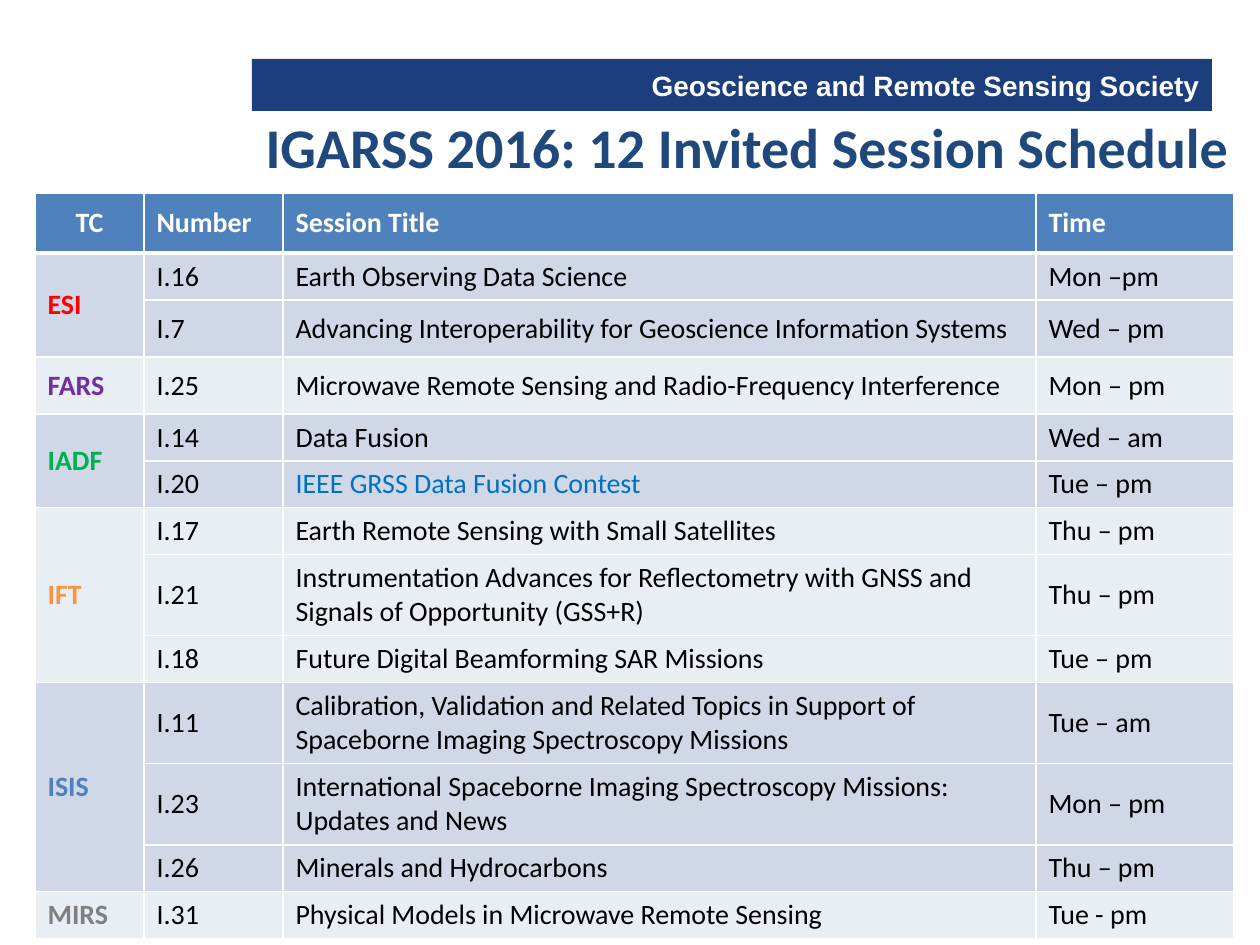
import pptx
import pptx.dml.color
import pptx.enum.shapes
import pptx.enum.text
import pptx.oxml
import pptx.oxml.ns
import pptx.util

PX_PER_INCH = 126
ALIGN = pptx.enum.text.PP_ALIGN
ANCHOR = pptx.enum.text.MSO_ANCHOR

COLORS = {
    "white": "FFFFFF", "black": "000000", "banner": "1C3E7D", "title": "1F497D",
    "header": "4F81BD", "dark_band": "D0D8E8", "light_band": "E9EDF4",
    "contest": "0070C0", "ESI": "FF0000", "FARS": "7030A0", "IADF": "00B050",
    "IFT": "F79646", "ISIS": "4F81BD", "MIRS": "808080",
}
HEADINGS = ["TC", "Number", "Session Title", "Time"]
COLUMN_WIDTHS = [109, 139, 753, 198]
HEADER_HEIGHT = 60
CONTEST = "IEEE GRSS Data Fusion Contest"
SCHEDULE = {
    "ESI": [
        ("I.16", "Earth Observing Data Science", "Mon –pm", 47),
        ("I.7", "Advancing Interoperability for Geoscience Information Systems", "Wed – pm", 57),
    ],
    "FARS": [
        ("I.25", "Microwave Remote Sensing and Radio-Frequency Interference", "Mon – pm", 57),
    ],
    "IADF": [
        ("I.14", "Data Fusion", "Wed – am", 46),
        ("I.20", CONTEST, "Tue – pm", 46),
    ],
    "IFT": [
        ("I.17", "Earth Remote Sensing with Small Satellites", "Thu – pm", 46),
        ("I.21", "Instrumentation Advances for Reflectometry with GNSS and "
                 "Signals of Opportunity (GSS+R)", "Thu – pm", 60),
        ("I.18", "Future Digital Beamforming SAR Missions", "Tue – pm", 46),
    ],
    "ISIS": [
        ("I.11", "Calibration, Validation and Related Topics in Support of "
                 "Spaceborne Imaging Spectroscopy Missions", "Tue – am", 60),
        ("I.23", "International Spaceborne Imaging Spectroscopy Missions: "
                 "Updates and News", "Mon – pm", 60),
        ("I.26", "Minerals and Hydrocarbons", "Thu – pm", 46),
    ],
    "MIRS": [
        ("I.31", "Physical Models in Microwave Remote Sensing", "Tue - pm", 46),
    ],
}


def px(length):
    return pptx.util.Emu(round(length * 914400 / PX_PER_INCH))


def rgb(name):
    return pptx.dml.color.RGBColor.from_string(COLORS[name])


def write_text(frame, text, size=16, font="Calibri", color="black", bold=False,
               align=ALIGN.LEFT):
    para = frame.paragraphs[0]
    para.alignment = align
    span = para.add_run()
    span.text = text
    span.font.name = font
    span.font.size = pptx.util.Pt(size)
    span.font.bold = bold
    span.font.color.rgb = rgb(color)


def add_banner(page):
    box = page.shapes.add_shape(pptx.enum.shapes.MSO_SHAPE.RECTANGLE,
                                px(252), px(59), px(960), px(52))
    box.shadow.inherit = False
    box.fill.solid()
    box.fill.fore_color.rgb = rgb("banner")
    box.line.fill.background()
    box.text_frame.word_wrap = True
    box.text_frame.vertical_anchor = ANCHOR.MIDDLE
    write_text(box.text_frame, "Geoscience and Remote Sensing Society",
               font="Arial", color="white", bold=True, align=ALIGN.RIGHT)


def set_title(page):
    box = page.shapes.title
    box.left, box.top, box.width, box.height = px(253), px(106), px(1007), px(115)
    frame = box.text_frame
    frame.word_wrap = True
    frame.auto_size = pptx.enum.text.MSO_AUTO_SIZE.NONE
    frame.vertical_anchor = ANCHOR.TOP
    write_text(frame, "IGARSS 2016: 12 Invited Session Schedule",
               size=32, color="title", bold=True)


def style_cell(cell, fill, top=1, bottom=1):
    properties = cell._tc.get_or_add_tcPr()
    for side, points in (("L", 1), ("R", 1), ("T", top), ("B", bottom)):
        properties.append(pptx.oxml.parse_xml(
            f'<a:ln{side} {pptx.oxml.ns.nsdecls("a")} w="{pptx.util.Pt(points)}">'
            f'<a:solidFill><a:srgbClr val="{COLORS["white"]}"/></a:solidFill>'
            f'</a:ln{side}>'))
    cell.fill.solid()
    cell.fill.fore_color.rgb = rgb(fill)
    cell.vertical_anchor = ANCHOR.MIDDLE


def fill_header(table):
    table.rows[0].height = px(HEADER_HEIGHT)
    for column, heading in enumerate(HEADINGS):
        cell = table.cell(0, column)
        style_cell(cell, "header", bottom=3)
        write_text(cell.text_frame, heading, color="white", bold=True,
                   align=ALIGN.LEFT if column else ALIGN.CENTER)


def fill_committee(table, first, committee, sessions, band):
    for row, (number, title, time, height) in enumerate(sessions, first):
        table.rows[row].height = px(height)
        for column in range(len(HEADINGS)):
            style_cell(table.cell(row, column), band, top=3 if row == 1 else 1)
        for column, text in enumerate((number, title, time), 1):
            write_text(table.cell(row, column).text_frame, text,
                       color="contest" if text == CONTEST else "black")
    label = table.cell(first, 0)
    if len(sessions) > 1:
        label.merge(table.cell(first + len(sessions) - 1, 0))
    write_text(label.text_frame, committee, color=committee, bold=True)


def add_schedule(page):
    heights = [HEADER_HEIGHT] + [session[-1] for sessions in SCHEDULE.values()
                                 for session in sessions]
    table = page.shapes.add_table(len(heights), len(HEADINGS), px(35), px(193),
                                  px(sum(COLUMN_WIDTHS)), px(sum(heights))).table
    for column, width in zip(table.columns, COLUMN_WIDTHS):
        column.width = px(width)
    fill_header(table)
    first = 1
    for index, (committee, sessions) in enumerate(SCHEDULE.items()):
        band = "light_band" if index % 2 else "dark_band"
        fill_committee(table, first, committee, sessions, band)
        first += len(sessions)


def main():
    deck = pptx.Presentation()
    deck.slide_width, deck.slide_height = px(1260), px(945)
    page = deck.slides.add_slide(deck.slide_layouts[5])
    add_banner(page)
    set_title(page)
    add_schedule(page)
    deck.save("out.pptx")


if __name__ == "__main__":
    main()
